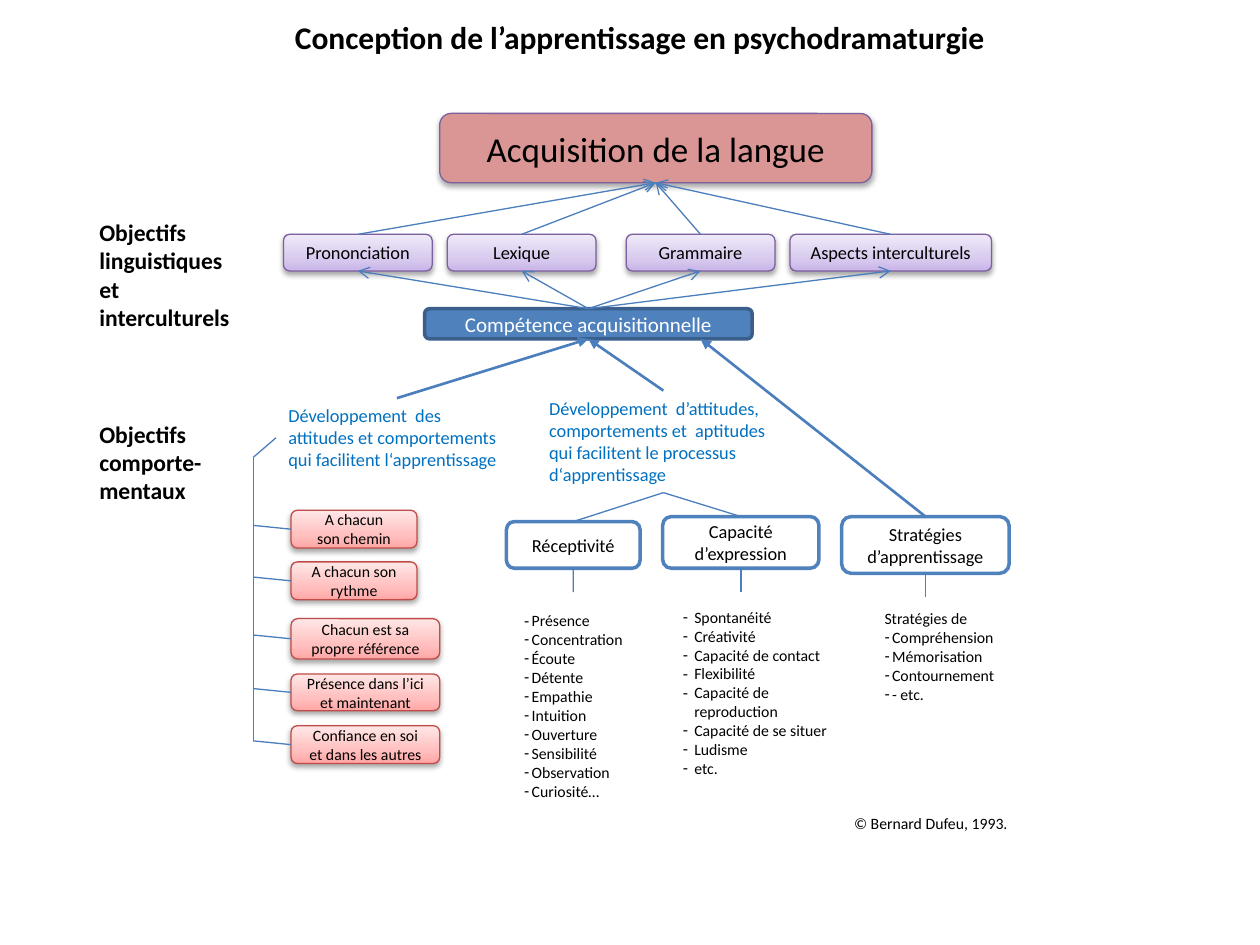
from copy import deepcopy
from dataclasses import dataclass
from typing import NamedTuple, Optional, Union

from lxml.etree import SubElement
from pptx import Presentation
from pptx.dml.color import RGBColor
from pptx.enum.shapes import MSO_CONNECTOR, MSO_SHAPE
from pptx.enum.text import MSO_ANCHOR, MSO_AUTO_SIZE, PP_ALIGN
from pptx.oxml.ns import qn
from pptx.util import Inches, Pt

TOP, LEFT, BOTTOM = 0, 1, 2


@dataclass(frozen=True)
class Theme:
    font: str = "Calibri"
    text: str = "000000"
    white: str = "FFFFFF"
    accent: str = "4F81BD"
    accent_dark: str = "3A5F8C"
    link: str = "4B7EBC"
    attitude: str = "0070C0"
    rose: str = "D99694"
    purple: str = "7D60A0"
    purples: tuple = ("C9B5E8", "D8CBEE", "F0EAF9")
    red: str = "BF4C48"
    reds: tuple = ("FFA6A5", "FFC0BF", "FFE7E7")
    goal: float = 20
    title: float = 18
    heading: float = 13.5
    skill: float = 12
    label: float = 10.5
    small: float = 9


T = Theme()


class BoxStyle(NamedTuple):
    fill: Union[str, tuple]
    line: str
    width: float
    size: float
    color: str = T.text
    shadow: bool = False


class Item(NamedTuple):
    text: str
    x: float
    y: float
    w: float
    h: float


class Bullets(NamedTuple):
    idx: int
    item: Item
    hang: float
    lead: int = 0


class Anchor(NamedTuple):
    shape: object
    site: int


End = Union[Anchor, tuple]

GOAL = BoxStyle(T.rose, T.purple, 0.75, T.goal, shadow=True)
DOMAIN = BoxStyle(T.purples, T.purple, 0.75, T.label, shadow=True)
SKILL = BoxStyle(T.accent, T.accent_dark, 2, T.skill, T.white)
PRINCIPLE = BoxStyle(T.reds, T.red, 0.75, T.small, shadow=True)
APTITUDE = BoxStyle(T.white, T.accent, 2, T.label)

DOMAINS = [
    Item("Prononciation", 2.25, 1.86, 1.18, 0.29),
    Item("Lexique", 3.55, 1.86, 1.18, 0.29),
    Item("Grammaire", 4.97, 1.86, 1.18, 0.29),
    Item("Aspects interculturels", 6.27, 1.86, 1.6, 0.29),
]
PRINCIPLES = [
    Item("A chacun\nson chemin", 2.31, 4.05, 1, 0.3),
    Item("A chacun son rythme", 2.31, 4.46, 1, 0.3),
    Item("Chacun est sa propre référence", 2.31, 4.91, 1.18, 0.32),
    Item("Présence dans l’ici et maintenant", 2.31, 5.35, 1.18, 0.29),
    Item("Confiance en soi et dans les autres", 2.31, 5.76, 1.18, 0.3),
]
APTITUDES = [
    Item("Réceptivité", 4.02, 4.14, 1.06, 0.37),
    Item("Capacité d’expression", 5.26, 4.1, 1.24, 0.41),
    Item("Stratégies d’apprentissage", 6.68, 4.1, 1.33, 0.45),
]
HEADINGS = [
    Item("Objectifs linguistiques\net interculturels", 0.69, 1.68, 1.39, 1.01),
    Item("Objectifs\ncomporte-mentaux", 0.69, 3.28, 1.12, 0.78),
]
ATTITUDES = [
    Item("Développement  des\nattitudes et comportements\nqui facilitent l‘apprentissage",
         2.19, 3.16, 1.92, 0.63),
    Item("Développement  d’attitudes, comportements et  aptitudes\n"
         "qui facilitent le processus d‘apprentissage", 4.26, 3.1, 2.01, 0.81),
]
LISTS = [
    Bullets(2, Item("Présence\nConcentration\nÉcoute\nDétente\nEmpathie\nIntuition\nOuverture\n"
                    "Sensibilité\nObservation\nCuriosité…", 4.06, 4.8, 1, 1.92), 0.06),
    Bullets(4, Item("Spontanéité\nCréativité\nCapacité de contact\nFlexibilité\n"
                    "Capacité de reproduction\nCapacité de se situer\nLudisme\netc.",
                    5.32, 4.77, 1.36, 1.46), 0.09),
    Bullets(3, Item("Stratégies de\nCompréhension\nMémorisation\nContournement\n- etc.",
                    6.92, 4.78, 1.12, 0.86), 0.06, lead=1),
]
TITLE = Item("Conception de l’apprentissage en psychodramaturgie", 2.24, 0.09, 5.79, 0.4)
CREDIT = Item("© Bernard Dufeu, 1993.", 6.68, 6.41, 1.43, 0.25)


def rgb(color: str) -> RGBColor:
    return RGBColor.from_string(color)


def write(sp, text: str, *, size: float, color: str = T.text, bold: bool = False,
          align=PP_ALIGN.LEFT, anchor=MSO_ANCHOR.TOP, right: float = 0.1,
          hang: Optional[float] = None, lead: int = 0) -> None:
    """Fill sp with one paragraph per line; hang adds dashes after the first lead lines."""
    tf = sp.text_frame
    tf.text = text
    tf.word_wrap, tf.auto_size, tf.vertical_anchor = True, MSO_AUTO_SIZE.NONE, anchor
    tf.margin_right = Inches(right)
    for i, p in enumerate(tf.paragraphs):
        p.alignment, p.space_before = align, Pt(0)
        if hang is not None:
            dash = i >= lead
            pPr = p._p.get_or_add_pPr()
            pPr.set("marL", str(Inches(hang if dash else 0)))
            pPr.set("indent", str(Inches(-hang if dash else 0)))
            if dash:
                SubElement(pPr, qn("a:buChar"), char="-")
            else:
                SubElement(pPr, qn("a:buNone"))
        for r in p.runs:
            r.font.name, r.font.size, r.font.bold = T.font, Pt(size), bold
            r.font.color.rgb = rgb(color)


def place(sp, item: Item) -> None:
    sp.left, sp.top, sp.width, sp.height = map(Inches, item[1:])


def add_text(slide, item: Item, **fmt):
    sp = slide.shapes.add_textbox(*map(Inches, item[1:]))
    write(sp, item.text, **fmt)
    return sp


def fill_gradient(sp, colors: tuple) -> None:
    """Three stops, running from the bottom edge upwards."""
    sp.fill.gradient()
    sp.fill.gradient_angle = 90
    stops = sp._element.spPr.find(qn("a:gradFill")).find(qn("a:gsLst"))
    stops.append(deepcopy(stops[0]))
    for stop, color, position in zip(sp.fill.gradient_stops, colors, (0, 0.35, 1)):
        stop.color.rgb, stop.position = rgb(color), position


def add_box(slide, item: Item, style: BoxStyle):
    sp = slide.shapes.add_shape(MSO_SHAPE.ROUNDED_RECTANGLE, *map(Inches, item[1:]))
    if isinstance(style.fill, tuple):
        fill_gradient(sp, style.fill)
    else:
        sp.fill.solid()
        sp.fill.fore_color.rgb = rgb(style.fill)
    sp.line.color.rgb, sp.line.width = rgb(style.line), Pt(style.width)
    if not style.shadow:
        sp.shadow.inherit = False
    write(sp, item.text, size=style.size, color=style.color,
          align=PP_ALIGN.CENTER, anchor=MSO_ANCHOR.MIDDLE)
    return sp


def link(slide, start: End, end: End, width: float = 0.75, head: str = "") -> None:
    """Join two ends, each a point in inches or the middle of a shape's side."""
    points = [(0, 0) if isinstance(e, Anchor) else e for e in (start, end)]
    line = slide.shapes.add_connector(
        MSO_CONNECTOR.STRAIGHT, *(Inches(v) for point in points for v in point))
    for e, join in ((start, line.begin_connect), (end, line.end_connect)):
        if isinstance(e, Anchor):
            join(e.shape, e.site)
    line.line.color.rgb, line.line.width = rgb(T.link), Pt(width)
    if head:
        SubElement(line.line._get_or_add_ln(), qn("a:tailEnd"), type=head)
    SubElement(line._element.spPr, qn("a:effectLst"))


def main() -> None:
    prs = Presentation()
    prs.slide_width, prs.slide_height = Inches(10), Inches(7.5)
    slide = prs.slides.add_slide(prs.slide_layouts[4])
    holders = {ph.placeholder_format.idx: ph for ph in slide.placeholders}
    place(holders[0], TITLE)
    write(holders[0], TITLE.text, size=T.title, bold=True)
    for b in LISTS:
        place(holders[b.idx], b.item)
        write(holders[b.idx], b.item.text, size=T.small, right=0, hang=b.hang, lead=b.lead)
    unused = holders[1]._element
    unused.getparent().remove(unused)

    goal = add_box(slide, Item("Acquisition de la langue", 3.49, 0.9, 3.43, 0.55), GOAL)
    skill = add_box(slide, Item("Compétence acquisitionnelle", 3.37, 2.45, 2.6, 0.24), SKILL)
    for item in HEADINGS:
        add_text(slide, item, size=T.heading, bold=True)
    for item in DOMAINS:
        domain = add_box(slide, item, DOMAIN)
        link(slide, Anchor(skill, TOP), Anchor(domain, BOTTOM), head="arrow")
        link(slide, Anchor(domain, TOP), Anchor(goal, BOTTOM), head="arrow")

    attitudes = [add_text(slide, i, size=T.label, color=T.attitude) for i in ATTITUDES]
    for sp in attitudes:
        link(slide, Anchor(sp, TOP), Anchor(skill, BOTTOM), 1.5, "triangle")
    learner, process = attitudes

    spine, spine_top, rise = 2.01, 3.63, 0.03
    link(slide, Anchor(learner, LEFT), (spine, spine_top))
    link(slide, (spine, spine_top), (spine, 5.88))
    for item in PRINCIPLES:
        sp = add_box(slide, item, PRINCIPLE)
        link(slide, (spine, item.y + item.h / 2 - rise), Anchor(sp, LEFT))

    aptitudes = [add_box(slide, i, APTITUDE) for i in APTITUDES]
    for sp, item in zip(aptitudes, APTITUDES):
        link(slide, (item.x + item.w / 2, item.y + item.h + 0.19), Anchor(sp, BOTTOM))
    for sp in aptitudes[:2]:
        link(slide, Anchor(process, BOTTOM), Anchor(sp, TOP))
    link(slide, Anchor(aptitudes[2], TOP), (5.56, 2.69), 1.5, "triangle")
    add_text(slide, CREDIT, size=T.small, right=0)
    prs.save("out.pptx")


if __name__ == "__main__":
    main()
